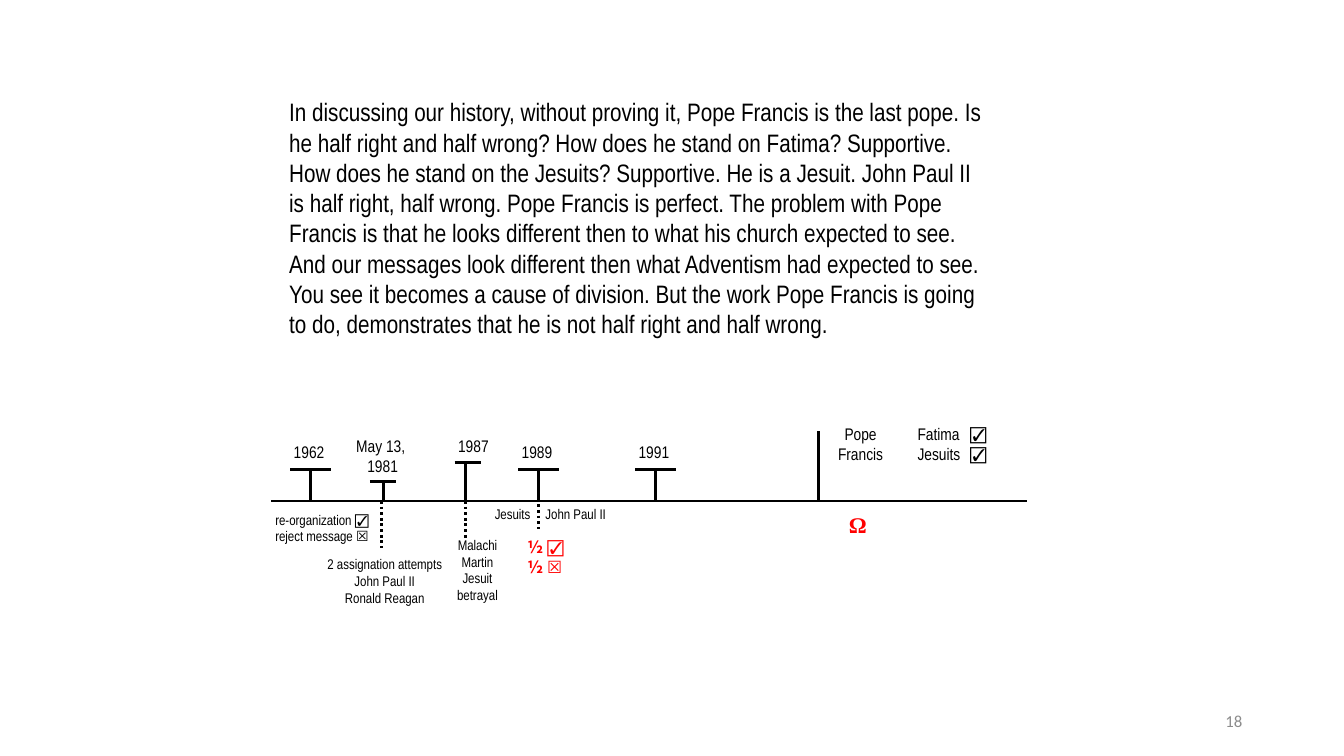
"""Build the slide on the last pope with its timeline of events."""
from dataclasses import dataclass

from lxml import etree
from pptx import Presentation
from pptx.dml.color import RGBColor
from pptx.enum import dml, shapes, text
from pptx.oxml import ns
from pptx.slide import Slide
from pptx.util import Inches, Pt

NARROW, SYMBOL, HALF = "Arial Narrow", "Arial", "Noto Sans CJK JP"
BLACK, RED, GREY = "000000", "FF0000", "8C8C8C"
LEFT, CENTER, RIGHT = text.PP_ALIGN.LEFT, text.PP_ALIGN.CENTER, text.PP_ALIGN.RIGHT
AXIS_Y = 4.97

DISCUSSION = (
    "In discussing our history, without proving it, Pope Francis is the last pope. "
    "Is he half right and half wrong? How does he stand on Fatima? Supportive. "
    "How does he stand on the Jesuits? Supportive. He is a Jesuit. John Paul II is "
    "half right, half wrong. Pope Francis is perfect. The problem with Pope Francis "
    "is that he looks different then to what his church expected to see. And our "
    "messages look different then what Adventism had expected to see. You see it "
    "becomes a cause of division. But the work Pope Francis is going to do, "
    "demonstrates that he is not half right and half wrong."
)


@dataclass(frozen=True)
class Span:
    """A stretch of text in one font."""

    words: str
    font: str = NARROW
    bold: bool = False


@dataclass(frozen=True)
class Label:
    """A text box, with one tuple of spans per paragraph."""

    left: float
    top: float
    width: float
    height: float
    rows: tuple[tuple[Span, ...], ...]
    size: int = 12
    color: str = BLACK
    align: text.PP_ALIGN = CENTER
    margins: tuple[float, float] = (0.04, 0.04)
    anchor: text.MSO_ANCHOR = text.MSO_ANCHOR.TOP
    tab: float = 0


@dataclass(frozen=True)
class Marker:
    """A stem on the timeline, with a bar across its top."""

    x: float
    top: float
    bar_center: float
    bar_half: float


@dataclass(frozen=True)
class Drop:
    """A dotted line leading down from the timeline."""

    x: float
    top: float
    bottom: float


def plain(*lines: str) -> tuple[tuple[Span, ...], ...]:
    """Turn lines into paragraphs of a single narrow span."""
    return tuple((Span(line),) for line in lines)


def marked(*pairs: tuple[str, str], font: str = NARROW,
           bold: bool = False) -> tuple[tuple[Span, ...], ...]:
    """Turn pairs of words and symbol into paragraphs."""
    return tuple((Span(words, font, bold), Span(symbol, SYMBOL))
                 for words, symbol in pairs)


MARKERS = (
    Marker(3.08, 4.66, 3.08, 0.2),
    Marker(3.8, 4.78, 3.8, 0.13),
    Marker(4.62, 4.59, 4.64, 0.13),
    Marker(5.34, 4.66, 5.34, 0.2),
    Marker(6.5, 4.66, 6.5, 0.2),
)

DROPS = (
    Drop(3.78, AXIS_Y, 5.44),
    Drop(4.62, AXIS_Y, 5.34),
    Drop(5.34, 4.78, 5.25),
)

LABELS = (
    Label(2.77, 0.91, 7.13, 2.52, plain(DISCUSSION), size=18, align=LEFT,
          margins=(0.1, 0.05)),
    Label(2.82, 4.34, 0.49, 0.28, plain("1962")),
    Label(3.47, 4.28, 0.65, 0.47, plain("May 13, ", "1981")),
    Label(4.44, 4.28, 0.51, 0.28, plain("1987")),
    Label(5.07, 4.34, 0.51, 0.28, plain("1989")),
    Label(6.23, 4.34, 0.51, 0.28, plain("1991")),
    Label(8.19, 4.16, 0.69, 0.69, plain("Pope Francis")),
    Label(9.06, 4.16, 0.81, 0.69, marked(("Fatima\t", "☑"), ("Jesuits\t", "☑")),
          align=LEFT, tab=0.52),
    Label(2.69, 5.03, 1.05, 0.44,
          marked(("re-organization ", "☑"), ("reject message ", "☒")),
          size=10, align=LEFT),
    Label(3.19, 5.47, 1.25, 0.56,
          plain("2 assignation attempts", "John Paul II", "Ronald Reagan"), size=10),
    Label(4.44, 5.28, 0.59, 0.81, plain("Malachi Martin", "Jesuit betrayal"), size=10),
    Label(4.69, 4.97, 0.61, 0.31, plain("Jesuits"), size=10, align=RIGHT),
    Label(5.37, 4.97, 0.75, 0.31, plain("John Paul II"), size=10, align=LEFT),
    Label(5.19, 5.28, 0.56, 0.75,
          marked(("½ ", "☑"), ("½ ", "☒"), font=HALF, bold=True),
          color=RED, align=LEFT),
    Label(8.38, 5.03, 0.34, 0.38, ((Span("Ω", "Times New Roman", True),),),
          size=16, color=RED, align=LEFT),
    Label(9.42, 6.95, 3, 0.4, ((Span("18", "Calibri"),),), color=GREY, align=RIGHT,
          margins=(0.1, 0.05), anchor=text.MSO_ANCHOR.MIDDLE),
)


def rgb(code: str) -> RGBColor:
    """Give the colour for a hex string."""
    return RGBColor.from_string(code)


def draw_line(page: Slide, x1: float, y1: float, x2: float, y2: float,
              dotted: bool = False) -> None:
    """Draw a black line without a shadow."""
    line = page.shapes.add_connector(shapes.MSO_CONNECTOR.STRAIGHT, Inches(x1),
                                     Inches(y1), Inches(x2), Inches(y2))
    line.line.color.rgb = rgb(BLACK)
    line.line.width = Pt(2)
    if dotted:
        line.line.dash_style = dml.MSO_LINE.ROUND_DOT
    etree.SubElement(line._element.spPr, ns.qn("a:effectLst"))


def draw_label(page: Slide, label: Label) -> None:
    """Draw a text box with its paragraphs."""
    box = page.shapes.add_textbox(Inches(label.left), Inches(label.top),
                                  Inches(label.width), Inches(label.height))
    frame = box.text_frame
    frame.word_wrap = True
    frame.vertical_anchor = label.anchor
    side, end = label.margins
    frame.margin_left = frame.margin_right = Inches(side)
    frame.margin_top = frame.margin_bottom = Inches(end)
    for index, row in enumerate(label.rows):
        para = frame.add_paragraph() if index else frame.paragraphs[0]
        para.alignment = label.align
        if label.tab:
            stops = etree.SubElement(para._p.get_or_add_pPr(), ns.qn("a:tabLst"))
            etree.SubElement(stops, ns.qn("a:tab"), pos=str(Inches(label.tab)), algn="l")
        for span in row:
            run = para.add_run()
            run.text = span.words
            run.font.name = span.font
            run.font.bold = span.bold
            run.font.size = Pt(label.size)
            run.font.color.rgb = rgb(label.color)


def main() -> None:
    """Build and save the deck."""
    deck = Presentation()
    deck.slide_width, deck.slide_height = Inches(13.33), Inches(7.5)
    page = deck.slides.add_slide(deck.slide_layouts.get_by_name("Blank"))
    draw_line(page, 2.69, AXIS_Y, 10.19, AXIS_Y)
    draw_line(page, 8.12, 4.28, 8.12, AXIS_Y)
    for marker in MARKERS:
        draw_line(page, marker.x, marker.top, marker.x, AXIS_Y)
        draw_line(page, marker.bar_center - marker.bar_half, marker.top,
                  marker.bar_center + marker.bar_half, marker.top)
    for drop in DROPS:
        draw_line(page, drop.x, drop.top, drop.x, drop.bottom, dotted=True)
    for label in LABELS:
        draw_label(page, label)
    deck.save("out.pptx")


if __name__ == "__main__":
    main()
